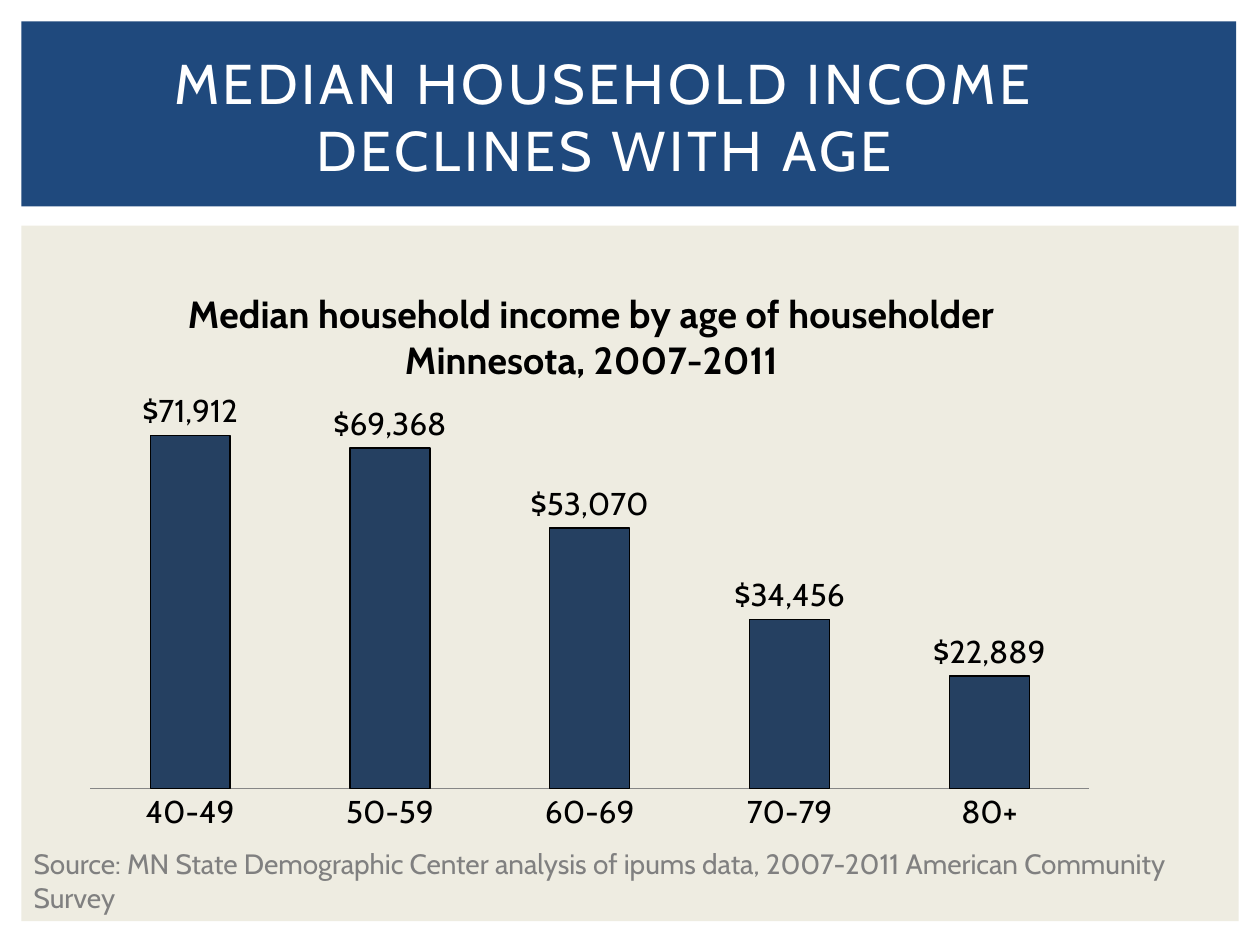
from lxml import etree
from pptx import Presentation
from pptx.chart.data import CategoryChartData
from pptx.dml.color import RGBColor
from pptx.enum.chart import XL_CHART_TYPE, XL_LABEL_POSITION, XL_TICK_MARK
from pptx.enum.shapes import MSO_SHAPE
from pptx.enum.text import MSO_ANCHOR, PP_ALIGN
from pptx.oxml import parse_xml
from pptx.oxml.ns import nsdecls, qn
from pptx.util import Cm, Pt

COLUMN = XL_CHART_TYPE.COLUMN_CLUSTERED
OUTSIDE = XL_LABEL_POSITION.OUTSIDE_END
NO_TICK = XL_TICK_MARK.NONE
RECT = MSO_SHAPE.RECTANGLE
BOTTOM, TOP = MSO_ANCHOR.BOTTOM, MSO_ANCHOR.TOP
CENTER, LEFT = PP_ALIGN.CENTER, PP_ALIGN.LEFT
FONT = "Cabin"
DOLLARS = '"$"#,##0'


def rgb(color):
    return RGBColor.from_string(color)


def set_layout(parent, after, **places):
    """Place a chart part by fractions of the chart, just after a sibling or first."""
    for old in parent.findall(qn("c:layout")):
        parent.remove(old)
    layout = parse_xml(f"<c:layout {nsdecls('c')}><c:manualLayout/></c:layout>")
    for tag, value in places.items():
        etree.SubElement(layout[0], qn(f"c:{tag}"), val=str(value))
    parent.insert(0 if after is None else parent.index(after) + 1, layout)


prs = Presentation()
prs.slide_width, prs.slide_height = Cm(25.4), Cm(19.05)
s = prs.slides.add_slide(prs.slide_layouts[6])

# Body panel and title band
for top, width, height, color in [(4.55, 24.54, 14.02, "EEECE1"), (0.43, 24.49, 3.73, "1F497D")]:
    sp = s.shapes.add_shape(RECT, Cm(0.43), Cm(top), Cm(width), Cm(height))
    sp.shadow.inherit = False
    sp.fill.solid()
    sp.fill.fore_color.rgb = rgb(color)
    sp.line.fill.background()

# Income chart
data = CategoryChartData()
data.categories = ["40-49", "50-59", "60-69", "70-79", "80+"]
data.add_series("Series 1", [71912, 69368, 53070, 34456, 22889])
chart = s.shapes.add_chart(COLUMN, Cm(1.4), Cm(5.28), Cm(20.98), Cm(11.73), data).chart
chart.font.name, chart.font.size = FONT, Pt(18)
chart.font.color.rgb = rgb("000000")
chart.has_legend = False

tf = chart.chart_title.text_frame
tf.text = "Median household income by age of householder\nMinnesota, 2007-2011"
for p in tf.paragraphs:
    p.font.name, p.font.size, p.font.bold = FONT, Pt(21.6), True
    p.font.color.rgb = rgb("000000")
title = chart.chart_title._element
set_layout(title, title.find(qn("c:tx")), xMode="edge", yMode="edge", x=0.11, y=0.04)
set_layout(chart._chartSpace.chart.plotArea, None, layoutTarget="inner",
           xMode="edge", yMode="edge", x=0.02, y=0.23, w=0.96, h=0.675)

chart.value_axis.visible = False
chart.value_axis.has_major_gridlines = False
chart.value_axis.minimum_scale, chart.value_axis.maximum_scale = 0, 80000
axis = chart.category_axis
axis.major_tick_mark = axis.minor_tick_mark = NO_TICK
axis.format.line.color.rgb = rgb("868686")
axis.format.line.width = Pt(0.75)

plot = chart.plots[0]
plot.gap_width, plot.overlap = 150, -25
plot.vary_by_categories = False
bars = plot.series[0]
bars.format.fill.solid()
bars.format.fill.fore_color.rgb = rgb("254061")
bars.format.line.color.rgb = rgb("000000")
bars.format.line.width = Pt(0.75)
labels = bars.data_labels
labels.show_value = True
labels.position = OUTSIDE
labels.number_format, labels.number_format_is_linked = DOLLARS, False

# Heading and source note
texts = [
    ("MEDIAN HOUSEHOLD INCOME DECLINES WITH AGE",
     (1.7, 0.84, 20.98, 2.97), 32, "FFFFFF", CENTER, BOTTOM, 2),
    ("Source: MN State Demographic Center analysis of ipums data, 2007-2011 American Community Survey",
     (0.43, 16.94, 24.33, 1.63), 16, "808080", LEFT, TOP, 0),
]
for text, place, size, color, align, anchor, spacing in texts:
    tf = s.shapes.add_textbox(*map(Cm, place)).text_frame
    tf.word_wrap, tf.vertical_anchor = True, anchor
    p = tf.paragraphs[0]
    p.alignment = align
    p.font.name, p.font.size = FONT, Pt(size)
    p.font.color.rgb = rgb(color)
    r = p.add_run()
    r.text = text
    if spacing:
        r.font._element.set("spc", str(spacing * 100))

prs.save("out.pptx")
